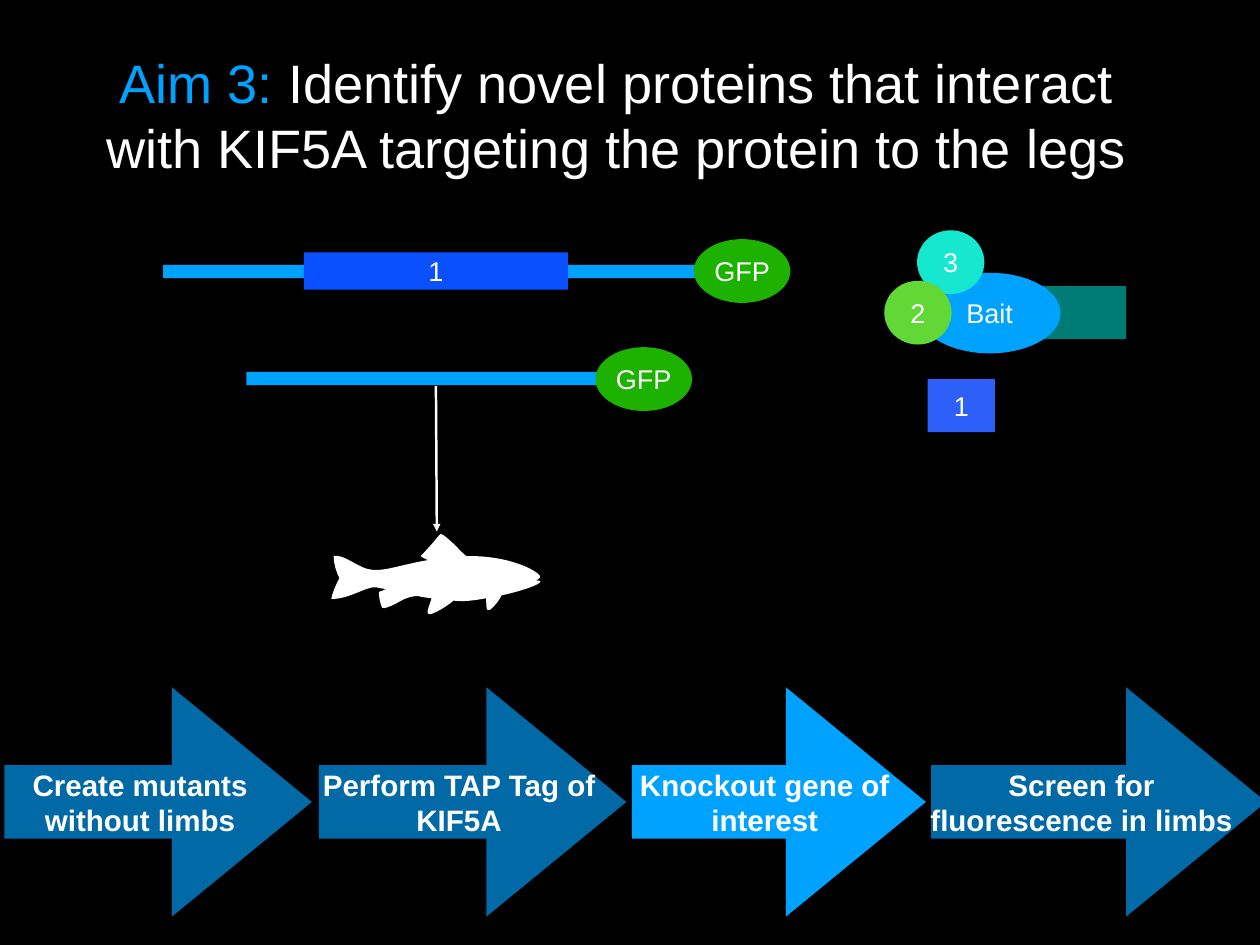
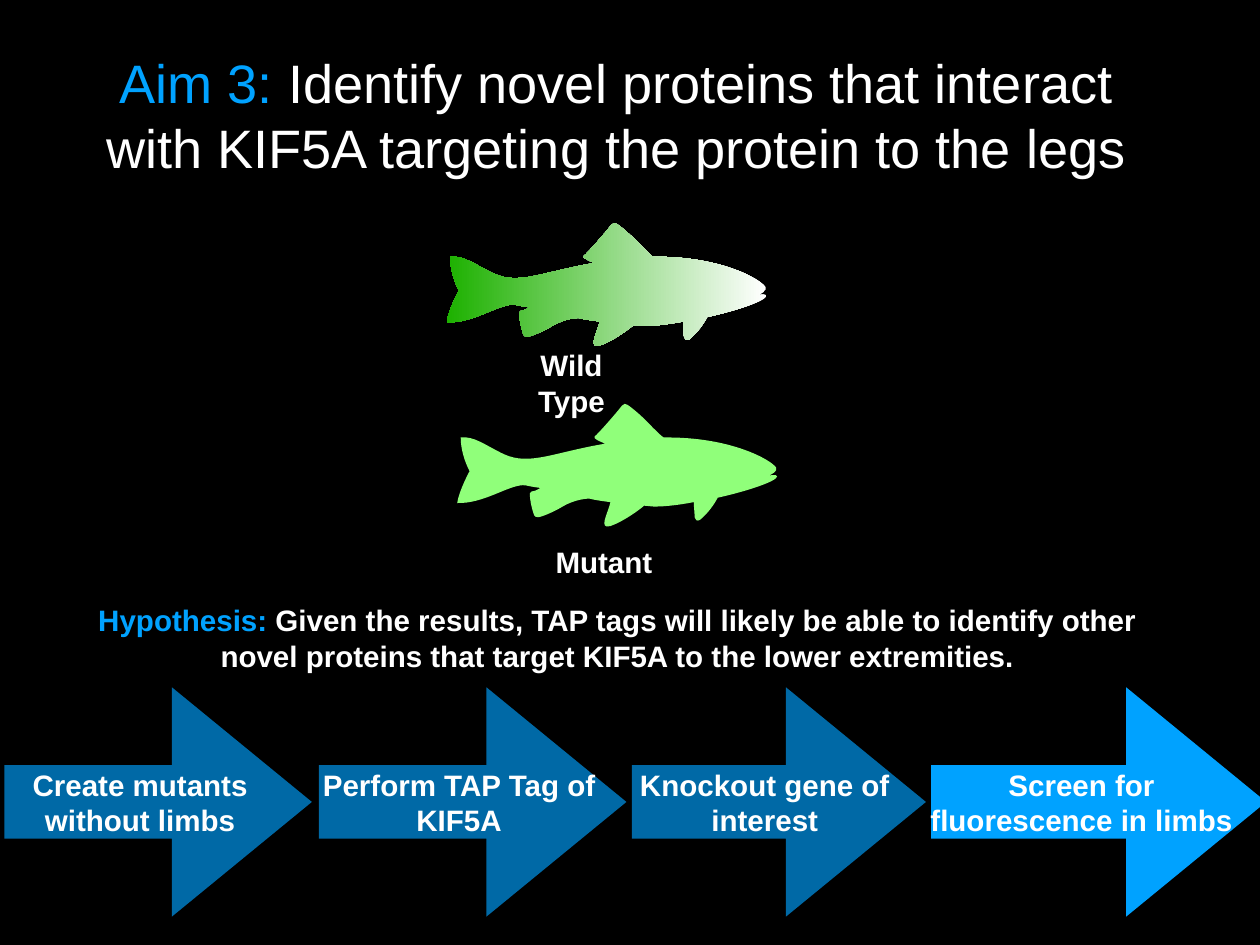
"""Build two slides on finding proteins that target KIF5A to the legs."""
from lxml import etree
from pptx import Presentation, util as u
from pptx.dml.color import RGBColor
from pptx.enum import shapes, text
from pptx.oxml import ns

W, H = 14.22, 10.67
FONT = "Arial"
COLORS = {
    "black": "000000", "white": "FFFFFF", "sky": "00A2FF", "blue": "0B50FF",
    "violet": "2C60F8", "teal": "007B76", "aqua": "16E7CF", "lime": "61D836",
    "green": "1DB100", "mint": "90FF7A",
}
RECT, OVAL = shapes.MSO_SHAPE.RECTANGLE, shapes.MSO_SHAPE.OVAL
TITLE = [("Aim 3: ", "sky"),
         ("Identify novel proteins that interact with KIF5A targeting the protein to the legs", "white")]
HYPOTHESIS = [("Hypothesis: ", "sky"),
              ("Given the results, TAP tags will likely be able to identify other novel proteins "
               "that target KIF5A to the lower extremities.", "white")]
TITLE_STYLE = {"size": u.Pt(44), "bold": False}
SHAPE_STYLE = {"size": u.Pt(22), "bold": False}
LABEL_STYLE = {"size": u.Pt(24), "bold": True}

STEPS = [
    ("Create mutants without limbs", (0.05, 3.47), (-0.08, 3.32)),
    ("Perform TAP Tag of KIF5A", (3.6, 3.47), (3.52, 3.32)),
    ("Knockout gene of interest", (7.13, 3.32), (6.97, 3.32)),
    ("Screen for fluorescence in limbs", (10.51, 3.78), (10.4, 3.61)),
]
PROTEINS = [
    (RECT, (11.11, 3.23, 1.6, 0.6), "teal", ""),
    (OVAL, (10.37, 3.08, 1.6, 0.91), "sky", "Bait"),
    (OVAL, (10.35, 2.6, 0.76, 0.72), "aqua", "3"),
    (OVAL, (9.98, 3.17, 0.76, 0.72), "lime", "2"),
    (RECT, (10.47, 4.28, 0.76, 0.6), "violet", "1"),
    (RECT, (1.84, 2.99, 6.39, 0.15), "sky", ""),
    (RECT, (3.43, 2.85, 2.98, 0.42), "blue", "1"),
    (RECT, (2.78, 4.2, 4.28, 0.15), "sky", ""),
    (OVAL, (6.72, 3.92, 1.09, 0.72), "green", "GFP"),
    (OVAL, (7.83, 2.7, 1.09, 0.72), "green", "GFP"),
]
FISH_LABELS = [("Wild Type", (6.01, 4.07, 0.88, 0.5)), ("Mutant", (6.19, 6.09, 1.25, 0.5))]

FISH_WIDTH = 361
FISH_START = (189, 0)
FISH_CURVES = [
    (188, 1, 187, 1, 186, 2), (180, 10, 158, 35, 155, 37), (153, 39, 160, 42, 167, 45),
    (108, 55, 82, 70, 53, 57), (32, 47, 19, 36, 4, 38), (4, 58, 14, 76, 14, 76),
    (14, 76, 2, 98, 0, 112), (31, 113, 60, 90, 77, 92), (81, 93, 87, 94, 94, 95),
    (89, 98, 86, 99, 84, 99), (83, 99, 82, 100, 82, 101), (82, 110, 85, 121, 87, 126),
    (87, 127, 89, 128, 91, 128), (95, 128, 109, 122, 119, 116), (134, 107, 149, 107, 149, 107),
    (157, 109, 165, 110, 173, 111), (170, 124, 159, 142, 173, 138), (187, 133, 204, 121, 211, 115),
    (215, 115, 218, 116, 222, 116), (236, 116, 251, 114, 267, 111), (267, 116, 268, 122, 268, 128),
    (268, 131, 271, 133, 274, 131), (283, 124, 291, 112, 294, 106), (330, 98, 361, 87, 361, 82),
    (361, 79, 352, 81, 352, 81), (352, 81, 363, 76, 360, 72), (355, 64, 310, 37, 233, 38),
    (230, 36, 225, 31, 220, 26), (211, 16, 197, 4, 192, 1), (191, 0, 190, 0, 189, 0),
]


def rgb(name):
    """Return the named colour."""
    return RGBColor.from_string(COLORS[name])


def inches(values):
    """Convert numbers to lengths."""
    return [u.Inches(v) for v in values]


def paint(sp, color):
    """Give a shape a plain fill without line or shadow."""
    sp.shadow.inherit = False
    sp.line.fill.background()
    sp.fill.solid()
    sp.fill.fore_color.rgb = rgb(color)


def write(sp, runs, style):
    """Write centred coloured runs into a shape."""
    tf = sp.text_frame
    frame = {"word_wrap": True, "vertical_anchor": text.MSO_ANCHOR.MIDDLE}
    frame.update({f"margin_{side}": u.Inches(0.06) for side in ("left", "top", "right", "bottom")})
    for key, value in frame.items():
        setattr(tf, key, value)
    p = tf.paragraphs[0]
    p.alignment = text.PP_ALIGN.CENTER
    for words, color in runs:
        r = p.add_run()
        r.text = words
        r.font.color.rgb = rgb(color)
        for key, value in {"name": FONT, **style}.items():
            setattr(r.font, key, value)


def add_text(s, box, runs, style):
    """Add a text box."""
    write(s.shapes.add_textbox(*inches(box)), runs, style)


def add_block(s, kind, box, color, label=""):
    """Add a filled preset shape with an optional label."""
    sp = s.shapes.add_shape(kind, *inches(box))
    paint(sp, color)
    if label:
        write(sp, [(label, "white")], SHAPE_STYLE)
    return sp


def add_fish(s, left, top, width, color):
    """Draw the curved fish outline at the given place and width."""
    fb = s.shapes.build_freeform(*FISH_START, scale=u.Inches(width) / FISH_WIDTH)
    fb.add_line_segments([curve[4:] for curve in FISH_CURVES], close=True)
    sp = fb.convert_to_shape(*inches((left, top)))
    for line, curve in zip(list(sp._element.iter(ns.qn("a:lnTo"))), FISH_CURVES):
        bend = etree.Element(ns.qn("a:cubicBezTo"))
        for x, y in zip(curve[::2], curve[1::2]):
            etree.SubElement(bend, ns.qn("a:pt"), x=str(x), y=str(y))
        line.getparent().replace(line, bend)
    paint(sp, color)
    return sp


def add_slide(prs, current):
    """Add a slide with the shared title and steps, one step being current."""
    s = prs.slides.add_slide(prs.slide_layouts[6])
    s.background.fill.solid()
    s.background.fill.fore_color.rgb = rgb("black")
    add_text(s, (0.89, 0.11, 12.14, 2.36), TITLE, TITLE_STYLE)
    for i, (_, (left, width), _) in enumerate(STEPS):
        sp = add_block(s, shapes.MSO_SHAPE.RIGHT_ARROW, (left, 7.76, width, 2.59), "sky")
        sp.adjustments[0], sp.adjustments[1] = 0.32, 0.61
        if i != current:
            clr = sp.fill._xPr.find(".//" + ns.qn("a:srgbClr"))
            etree.SubElement(clr, ns.qn("a:alpha"), val="65000")
    for label, _, (left, width) in STEPS:
        add_text(s, (left, 8.6, width, 0.91), [(label, "white")], LABEL_STYLE)
    return s


def add_arrow(s, start, end):
    """Add a white line with an arrowhead at its end."""
    cx = s.shapes.add_connector(shapes.MSO_CONNECTOR.STRAIGHT, *inches(start + end))
    cx.line.color.rgb = rgb("white")
    cx.line.width = u.Pt(2)
    etree.SubElement(cx.line._get_or_add_ln(), ns.qn("a:tailEnd"), type="triangle")
    etree.SubElement(cx._element.spPr, ns.qn("a:effectLst"))


def main():
    """Build and save the presentation."""
    prs = Presentation()
    prs.slide_width, prs.slide_height = inches((W, H))

    s = add_slide(prs, current=2)
    for block in PROTEINS:
        add_block(s, *block)
    add_fish(s, 3.74, 6.03, 2.36, "white")
    add_arrow(s, (4.92, 4.36), (4.93, 6))

    s = add_slide(prs, current=3)
    wild = add_fish(s, 5.04, 2.52, 3.61, "green")
    wild.fill.gradient()
    wild.fill.gradient_angle = 180
    for stop, color in zip(wild.fill.gradient_stops, ("white", "green")):
        stop.color.rgb = rgb(color)
    add_fish(s, 5.16, 4.56, 3.61, "mint")
    for label, box in FISH_LABELS:
        add_text(s, box, [(label, "white")], LABEL_STYLE)
    add_text(s, (0.96, 6.74, 12.01, 0.92), HYPOTHESIS, LABEL_STYLE)

    prs.save("out.pptx")


if __name__ == "__main__":
    main()
